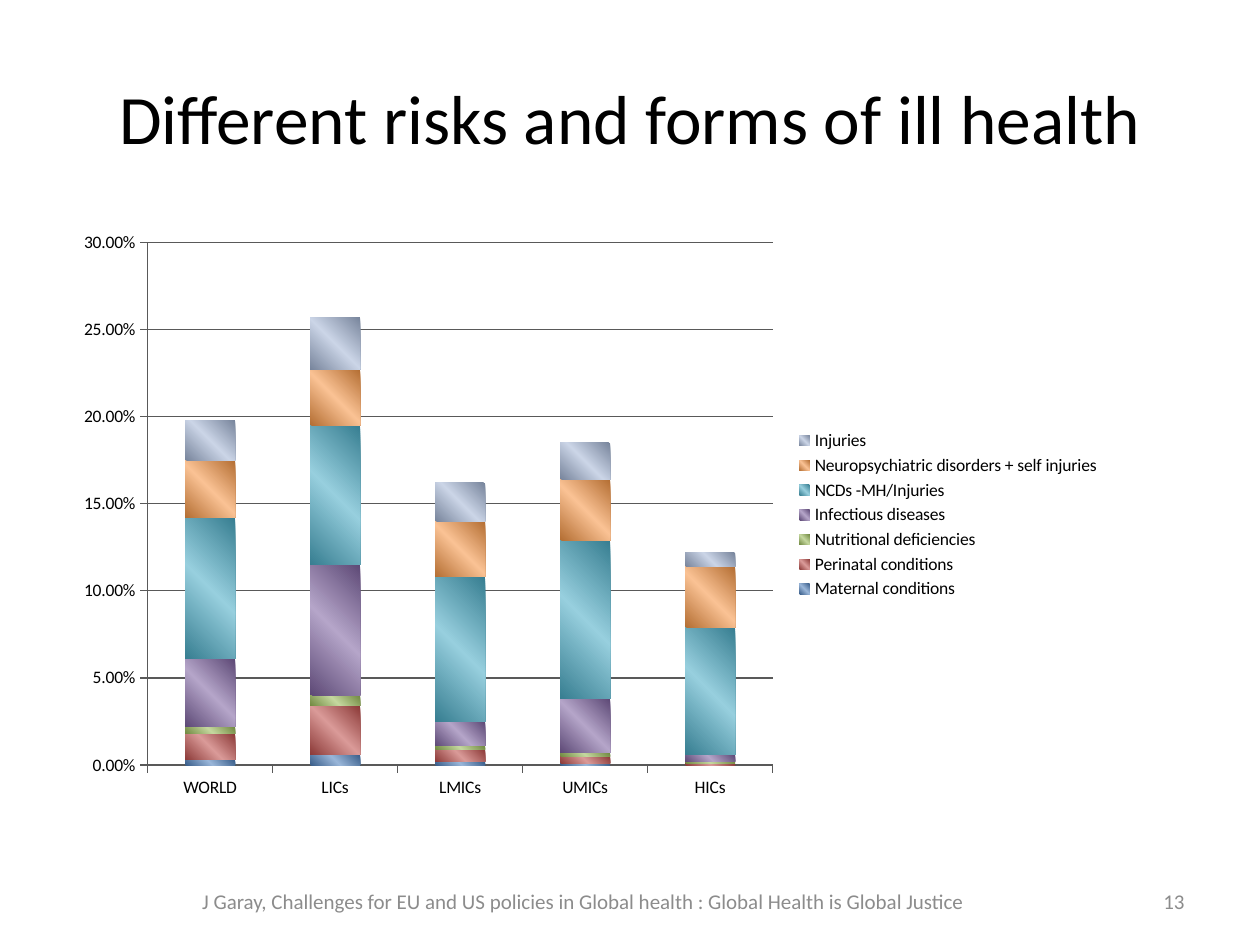
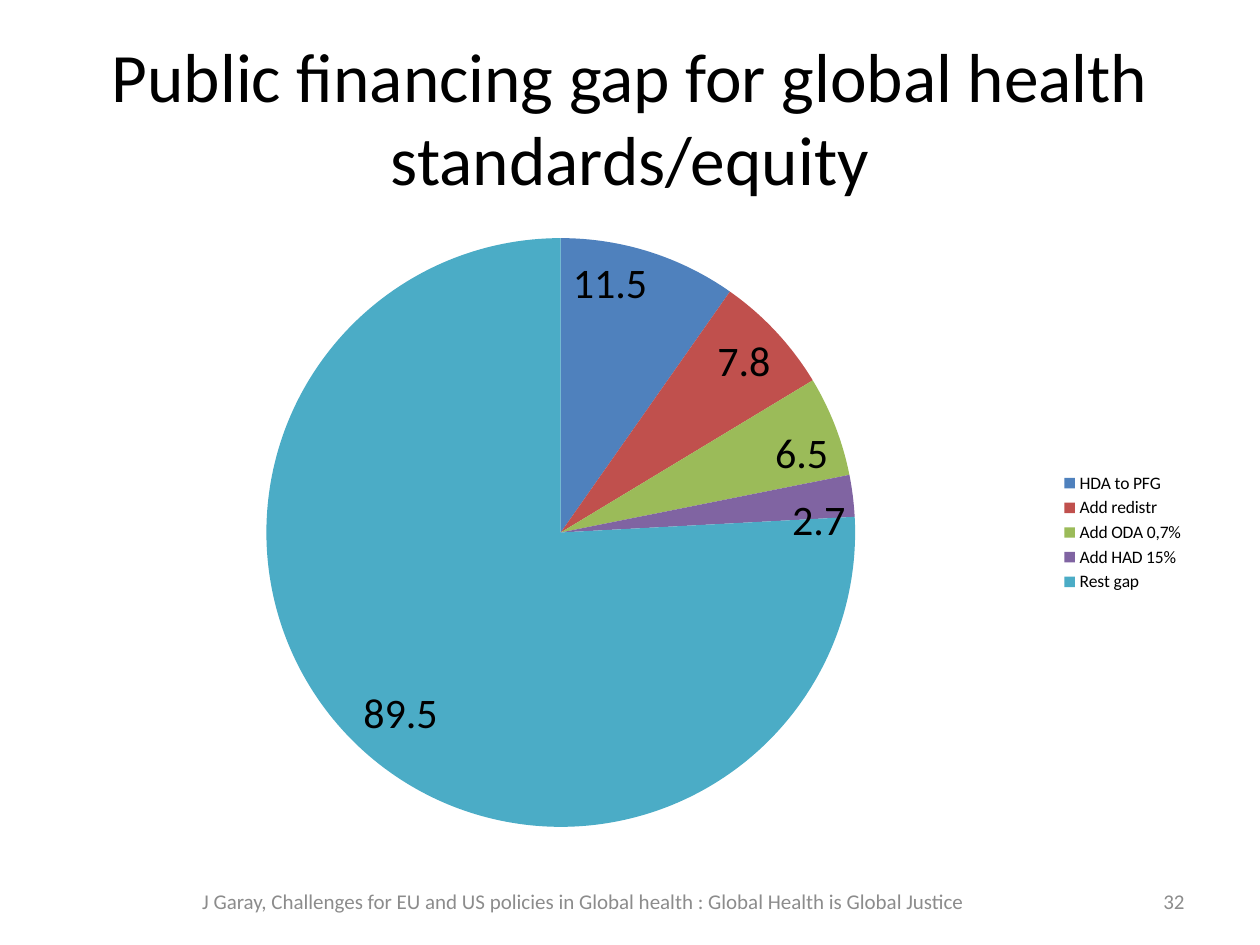
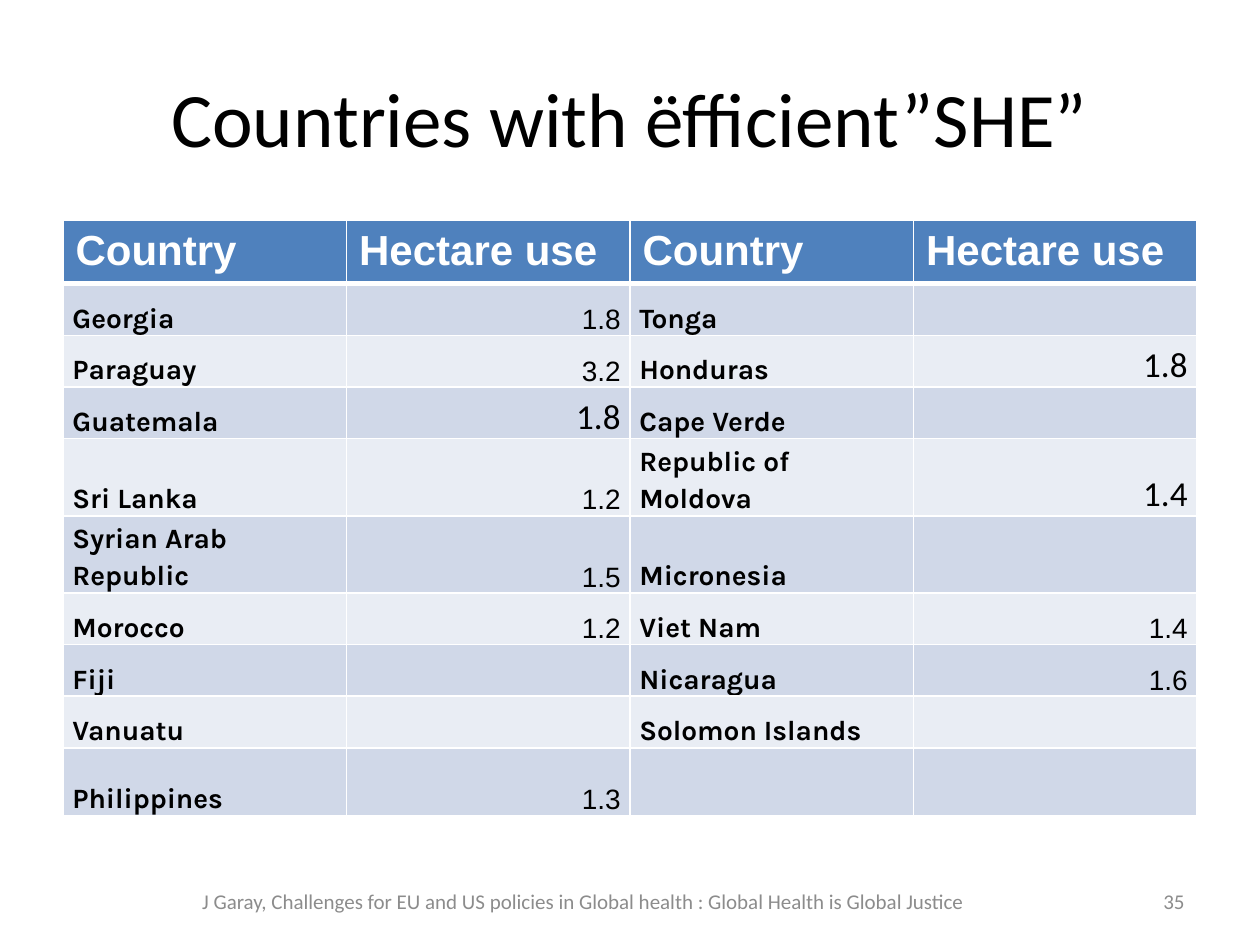
from itertools import chain
from lxml.etree import SubElement
from pptx import Presentation
from pptx.chart.data import CategoryChartData
from pptx.dml.color import RGBColor
from pptx.enum.chart import XL_CHART_TYPE, XL_LABEL_POSITION, XL_LEGEND_POSITION, XL_TICK_MARK
from pptx.enum.text import MSO_ANCHOR, PP_ALIGN
from pptx.oxml.ns import qn
from pptx.util import Cm, Pt

BLACK, WHITE, GREY, AXIS = "000000", "FFFFFF", "8C8C8C", "595959"
BLUE, RED, GREEN, PURPLE, TEAL = "4F81BD", "C0504D", "9BBB59", "8064A2", "4BACC6"
ORANGE, PALE_BLUE = "F79646", "A5B6D6"
BANDS = ["D0D8E8", "E9EDF4"]

TITLE_BOX = (1.27, 0.76, 22.86, 3.18)
FOOTER_BOX = (2.97, 17.65, 17.58, 1.02)
NUMBER_BOX = (18.21, 17.65, 5.92, 1.02)
BURDEN_BOX = (1.27, 4.45, 21.16, 11.86)
GAP_BOX = (1.27, 4.45, 22.86, 12.57)
TABLE_BOX = (1.27, 4.45, 22.86, 10.73)
FOOTER = "J Garay, Challenges for EU and US policies in Global health : Global Health is Global Justice"

INCOME_GROUPS = ["WORLD", "LICs", "LMICs", "UMICs", "HICs"]
CONDITIONS = [
    ("Maternal conditions", BLUE, (0.003, 0.006, 0.002, 0.001, 0)),
    ("Perinatal conditions", RED, (0.015, 0.028, 0.007, 0.004, 0.001)),
    ("Nutritional deficiencies", GREEN, (0.004, 0.006, 0.002, 0.002, 0.001)),
    ("Infectious diseases", PURPLE, (0.039, 0.075, 0.014, 0.031, 0.004)),
    ("NCDs -MH/Injuries", TEAL, (0.081, 0.08, 0.083, 0.091, 0.073)),
    ("Neuropsychiatric disorders + self injuries", ORANGE, (0.033, 0.032, 0.032, 0.035, 0.035)),
    ("Injuries", PALE_BLUE, (0.023, 0.03, 0.022, 0.021, 0.008)),
]
FUNDING = [
    ("HDA to PFG", 11.5, BLUE),
    ("Add redistr", 7.8, RED),
    ("Add ODA 0,7%", 6.5, GREEN),
    ("Add HAD 15%", 2.7, PURPLE),
    ("Rest gap", 89.5, TEAL),
]
HEADINGS = ["Country", "Hectare use"] * 2
HECTARES = [
    ("Georgia", "1.8", "Tonga", ""),
    ("Paraguay", "3.2", "Honduras", "1.8"),
    ("Guatemala", "1.8", "Cape Verde", ""),
    ("Sri Lanka", "1.2", "Republic of Moldova", "1.4"),
    ("Syrian Arab Republic", "1.5", "Micronesia", ""),
    ("Morocco", "1.2", "Viet Nam", "1.4"),
    ("Fiji", "", "Nicaragua", "1.6"),
    ("Vanuatu", "", "Solomon Islands", ""),
    ("Philippines", "1.3", "", ""),
]
LARGE_VALUES = {"Guatemala", "Honduras", "Republic of Moldova"}


def color(value):
    """Turn a hex string into a colour."""
    return RGBColor.from_string(value)


def mix(base, other, share):
    """Blend a share of another hex colour into a base one."""
    pairs = zip(bytes.fromhex(base), bytes.fromhex(other))
    return bytes(round(a + (b - a) * share) for a, b in pairs).hex().upper()


def lengths(box):
    """Turn a box in centimetres into lengths."""
    return [Cm(side) for side in box]


def style(font, size, name="Calibri", ink=BLACK, bold=False):
    """Set the look of a font."""
    font.size, font.name, font.bold = Pt(size), name, bold
    font.color.rgb = color(ink)


def add_text(slide, box, text, size, align, ink=BLACK):
    """Place one vertically centred paragraph in a box."""
    frame = slide.shapes.add_textbox(*lengths(box)).text_frame
    frame.word_wrap = True
    frame.vertical_anchor = MSO_ANCHOR.MIDDLE
    line = frame.paragraphs[0]
    line.text, line.alignment = text, align
    style(line.font, size, ink=ink)


def add_page(deck, title, number, title_size=39.6):
    """Start a slide with its title, footer and number."""
    slide = deck.slides.add_slide(deck.slide_layouts[6])
    add_text(slide, TITLE_BOX, title, title_size, PP_ALIGN.CENTER)
    add_text(slide, FOOTER_BOX, FOOTER, 12, PP_ALIGN.CENTER, GREY)
    add_text(slide, NUMBER_BOX, str(number), 12, PP_ALIGN.RIGHT, GREY)
    return slide


def add_chart(slide, box, kind, categories, series):
    """Place a chart with a legend on its right."""
    data = CategoryChartData()
    data.categories = categories
    for name, values in series:
        data.add_series(name, values)
    chart = slide.shapes.add_chart(kind, *lengths(box), data).chart
    style(chart.font, 10)
    chart.has_title = False
    chart.has_legend = True
    chart.legend.position = XL_LEGEND_POSITION.RIGHT
    chart.legend.include_in_layout = False
    return chart


def shade(fill, base):
    """Fill with a diagonal sheen, dark at both ends."""
    fill.gradient()
    fill.gradient_angle = 45
    stops = fill.gradient_stops
    dark, light = mix(base, BLACK, 0.27), mix(base, WHITE, 0.42)
    for stop, tone, place in zip(stops, (dark, light), (0, 0.5)):
        stop.color.rgb, stop.position = color(tone), place
    stop_list = fill._xPr.find(qn("a:gradFill")).find(qn("a:gsLst"))
    last = SubElement(stop_list, qn("a:gs"), pos="100000")
    SubElement(last, qn("a:srgbClr"), val=dark)


def add_burden_chart(slide, box):
    """Stack the conditions for each income group."""
    chart = add_chart(slide, box, XL_CHART_TYPE.COLUMN_STACKED, INCOME_GROUPS,
                      [(name, values) for name, _, values in CONDITIONS])
    plot = chart.plots[0]
    plot.gap_width, plot.overlap, plot.vary_by_categories = 150, 100, False
    for series, (_, base, _) in zip(plot.series, CONDITIONS):
        shade(series.format.fill, base)
    shares = chart.value_axis
    shares.minimum_scale, shares.maximum_scale, shares.major_unit = 0, 0.3, 0.05
    shares.tick_labels.number_format = "0.00%"
    shares.tick_labels.number_format_is_linked = False
    shares.has_major_gridlines = True
    for axis in (shares, chart.category_axis):
        axis.major_tick_mark = XL_TICK_MARK.OUTSIDE
    for line in (shares.format.line, chart.category_axis.format.line,
                 shares.major_gridlines.format.line):
        line.color.rgb, line.width = color(AXIS), Pt(0.75)


def add_gap_chart(slide, box):
    """Divide the financing gap by source of funds."""
    sources, amounts, colors = zip(*FUNDING)
    chart = add_chart(slide, box, XL_CHART_TYPE.PIE, sources, [("Series 1", amounts)])
    plot = chart.plots[0]
    plot.vary_by_categories = True
    for index, base in enumerate(colors):
        fill = plot.series[0].points[index].format.fill
        fill.solid()
        fill.fore_color.rgb = color(base)
    plot.has_data_labels = True
    labels = plot.data_labels
    labels.show_value = True
    labels.position = XL_LABEL_POSITION.INSIDE_END
    style(labels.font, 24)


def paint_cell(cell, fill, bottom=1):
    """Give a cell its fill and white borders."""
    properties = cell._tc.get_or_add_tcPr()
    for tag, width in (("lnL", 1), ("lnR", 1), ("lnT", 1), ("lnB", bottom)):
        edge = SubElement(properties, qn(f"a:{tag}"), w=str(Pt(width)))
        SubElement(SubElement(edge, qn("a:solidFill")), qn("a:srgbClr"), val=WHITE)
    cell.fill.solid()
    cell.fill.fore_color.rgb = color(fill)


def write_entry(cell, text, is_value, large):
    """Write a country or its hectare use at the foot of a cell."""
    cell.vertical_anchor = MSO_ANCHOR.BOTTOM
    cell.margin_left = cell.margin_right = Cm(0.19)
    cell.margin_top = cell.margin_bottom = 0
    line = cell.text_frame.paragraphs[0]
    line.text, line.line_spacing = text, 1.15
    if not is_value:
        style(line.font, 16, "Karla", bold=True)
        return
    line.alignment = PP_ALIGN.RIGHT
    if large:
        style(line.font, 20)
    else:
        style(line.font, 16, "Arial")


def add_hectare_table(slide, box):
    """List the countries and their hectare use in two pairs of columns."""
    table = slide.shapes.add_table(len(HECTARES) + 1, len(HEADINGS), *lengths(box)).table
    for column in table.columns:
        column.width = Cm(box[2] / len(HEADINGS))
    for row in table.rows:
        row.height = Cm(1.04)
    table.rows[len(HECTARES)].height = Cm(1.37)
    for cell, heading in zip(table.rows[0].cells, HEADINGS):
        paint_cell(cell, BLUE, bottom=3)
        line = cell.text_frame.paragraphs[0]
        line.text = heading
        style(line.font, 24, "Arial", WHITE, True)
    for index, entries in enumerate(HECTARES):
        owners = chain.from_iterable((name, name) for name in entries[::2])
        for column, (text, owner) in enumerate(zip(entries, owners)):
            cell = table.cell(index + 1, column)
            paint_cell(cell, BANDS[index % 2])
            if text:
                write_entry(cell, text, column % 2 == 1, owner in LARGE_VALUES)


def main():
    """Build the three slides and save them."""
    deck = Presentation()
    deck.slide_width, deck.slide_height = Cm(25.4), Cm(19.05)
    add_burden_chart(add_page(deck, "Different risks and forms of ill health", 13), BURDEN_BOX)
    add_gap_chart(add_page(deck, "Public financing gap for global health standards/equity", 32), GAP_BOX)
    add_hectare_table(add_page(deck, "Countries with ëfficient”SHE”", 35, 44), TABLE_BOX)
    deck.save("out.pptx")


if __name__ == "__main__":
    main()
